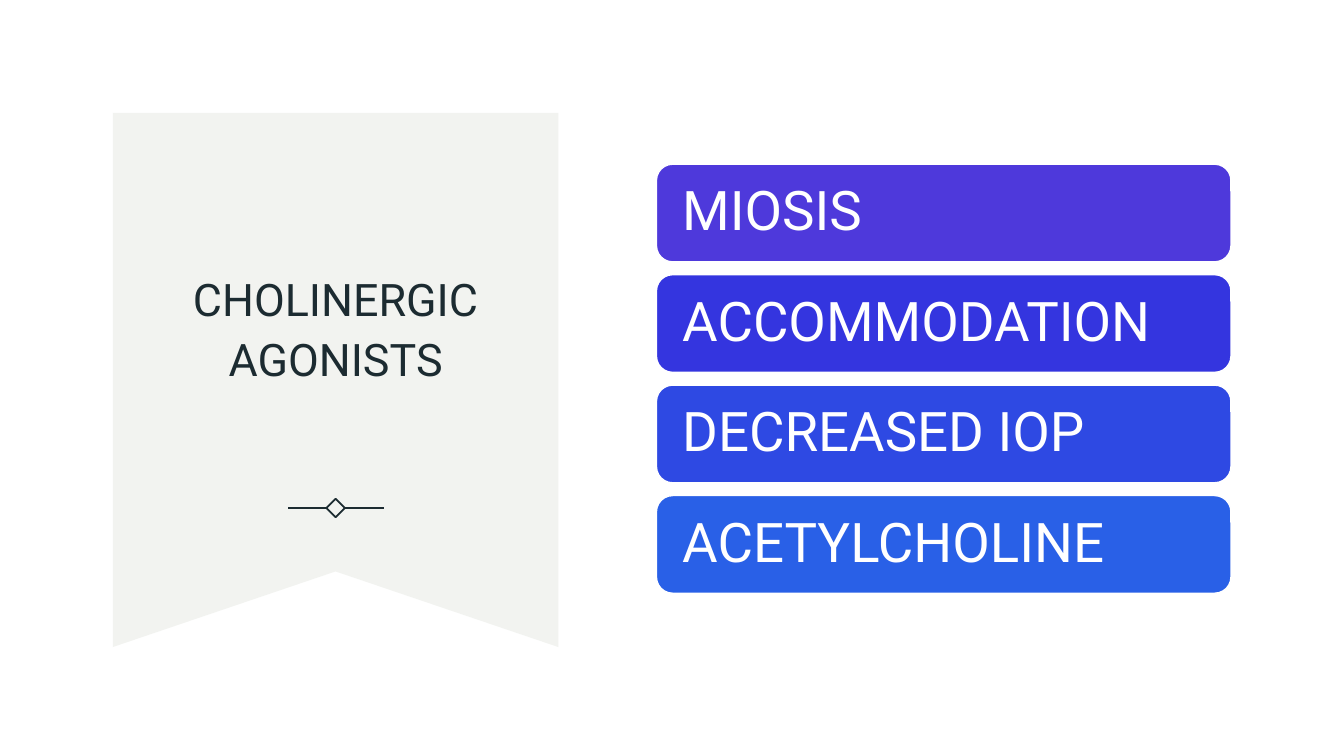
from lxml import etree
from pptx import Presentation
from pptx.dml.color import RGBColor
from pptx.enum.shapes import MSO_CONNECTOR, MSO_SHAPE
from pptx.enum.text import MSO_ANCHOR, MSO_AUTO_SIZE, PP_ALIGN
from pptx.oxml.ns import qn
from pptx.util import Pt

STRAIGHT = MSO_CONNECTOR.STRAIGHT
DIAMOND = MSO_SHAPE.DIAMOND
ROUNDED = MSO_SHAPE.ROUNDED_RECTANGLE
MIDDLE = MSO_ANCHOR.MIDDLE
NO_AUTOFIT = MSO_AUTO_SIZE.NONE
CENTER = PP_ALIGN.CENTER
LEFT = PP_ALIGN.LEFT

TITLE = "CHOLINERGIC AGONISTS"
EFFECTS = [
    ("MIOSIS", "4E39DB"),
    ("ACCOMMODATION", "3435DF"),
    ("DECREASED IOP", "2E49E3"),
    ("ACETYLCHOLINE", "2960E7"),
]
THEME = {
    "font": "Roboto",
    "ink": "1C2B31",
    "paper": "FFFFFF",
    "ribbon": "F2F3F0",
    "title_size": 32,
    "effect_size": 39,
}

SLIDE_WIDTH, SLIDE_HEIGHT = 960, 540
RIBBON_LEFT, RIBBON_TOP, RIBBON_RIGHT, RIBBON_BOTTOM = 80.6, 80.6, 398.8, 462.2
NOTCH_TOP = 408.2
TITLE_BOX = (112, 130.2, 255.6, 205.2)
ORNAMENT_Y, ORNAMENT_REACH, DIAMOND_SIZE = 362.9, 34.3, 13.2
BAR_LEFT, BAR_TOP, BAR_WIDTH, BAR_HEIGHT, BAR_PITCH = 468.9, 117.3, 410.4, 69.8, 78.9
BAR_INSET = 15


def points(*values):
    return [Pt(value) for value in values]


def color(name):
    return RGBColor.from_string(THEME.get(name, name))


def apply(target, values):
    for name, value in values.items():
        setattr(target, name, value)


def fill(shape, name):
    shape.fill.solid()
    shape.fill.fore_color.rgb = color(name)
    shape.shadow.inherit = False


def outline(shape, name, width):
    shape.line.color.rgb = color(name)
    shape.line.width = Pt(width)


def write(shape, text, size, ink, alignment, spacing, inset):
    frame = shape.text_frame
    apply(frame, {
        "text": text, "word_wrap": True, "auto_size": NO_AUTOFIT,
        "vertical_anchor": MIDDLE, "margin_left": Pt(inset), "margin_right": Pt(inset),
    })
    paragraph = frame.paragraphs[0]
    apply(paragraph, {"alignment": alignment, "line_spacing": spacing})
    apply(paragraph.font, {"name": THEME["font"], "size": Pt(THEME[size])})
    paragraph.font.color.rgb = color(ink)


def add_ribbon(slide):
    center = (RIBBON_LEFT + RIBBON_RIGHT) / 2
    corners = [
        (RIBBON_RIGHT, RIBBON_TOP), (RIBBON_RIGHT, RIBBON_BOTTOM),
        (center, NOTCH_TOP), (RIBBON_LEFT, RIBBON_BOTTOM),
    ]
    builder = slide.shapes.build_freeform(*points(RIBBON_LEFT, RIBBON_TOP))
    builder.add_line_segments([points(*corner) for corner in corners], close=True)
    ribbon = builder.convert_to_shape()
    fill(ribbon, "ribbon")
    ribbon.line.fill.background()
    slide.shapes.title.element.addprevious(ribbon.element)


def add_title(slide):
    title = slide.shapes.title
    apply(title, dict(zip(("left", "top", "width", "height"), points(*TITLE_BOX))))
    write(title, TITLE, "title_size", "ink", CENTER, 1.1, 7.2)


def add_ornament(slide):
    center = (RIBBON_LEFT + RIBBON_RIGHT) / 2
    half = DIAMOND_SIZE / 2
    diamond = slide.shapes.add_shape(DIAMOND, *points(
        center - half, ORNAMENT_Y - half, DIAMOND_SIZE, DIAMOND_SIZE))
    diamond.fill.background()
    diamond.shadow.inherit = False
    outline(diamond, "ink", 1.25)
    for direction, site in ((-1, 1), (1, 3)):
        line = slide.shapes.add_connector(STRAIGHT, *points(
            center + direction * half, ORNAMENT_Y,
            center + direction * ORNAMENT_REACH, ORNAMENT_Y))
        line.begin_connect(diamond, site)
        outline(line, "ink", 1.25)
        etree.SubElement(line.element.spPr, qn("a:effectLst"))


def add_effects(slide):
    for index, (text, shade) in enumerate(EFFECTS):
        bar = slide.shapes.add_shape(ROUNDED, *points(
            BAR_LEFT, BAR_TOP + index * BAR_PITCH, BAR_WIDTH, BAR_HEIGHT))
        fill(bar, shade)
        outline(bar, "paper", 1)
        write(bar, text, "effect_size", "paper", LEFT, 0.9, BAR_INSET)


def main():
    presentation = Presentation()
    presentation.slide_width, presentation.slide_height = points(SLIDE_WIDTH, SLIDE_HEIGHT)
    slide = presentation.slides.add_slide(presentation.slide_layouts[5])
    add_ribbon(slide)
    add_title(slide)
    add_ornament(slide)
    add_effects(slide)
    presentation.save("out.pptx")


if __name__ == "__main__":
    main()
